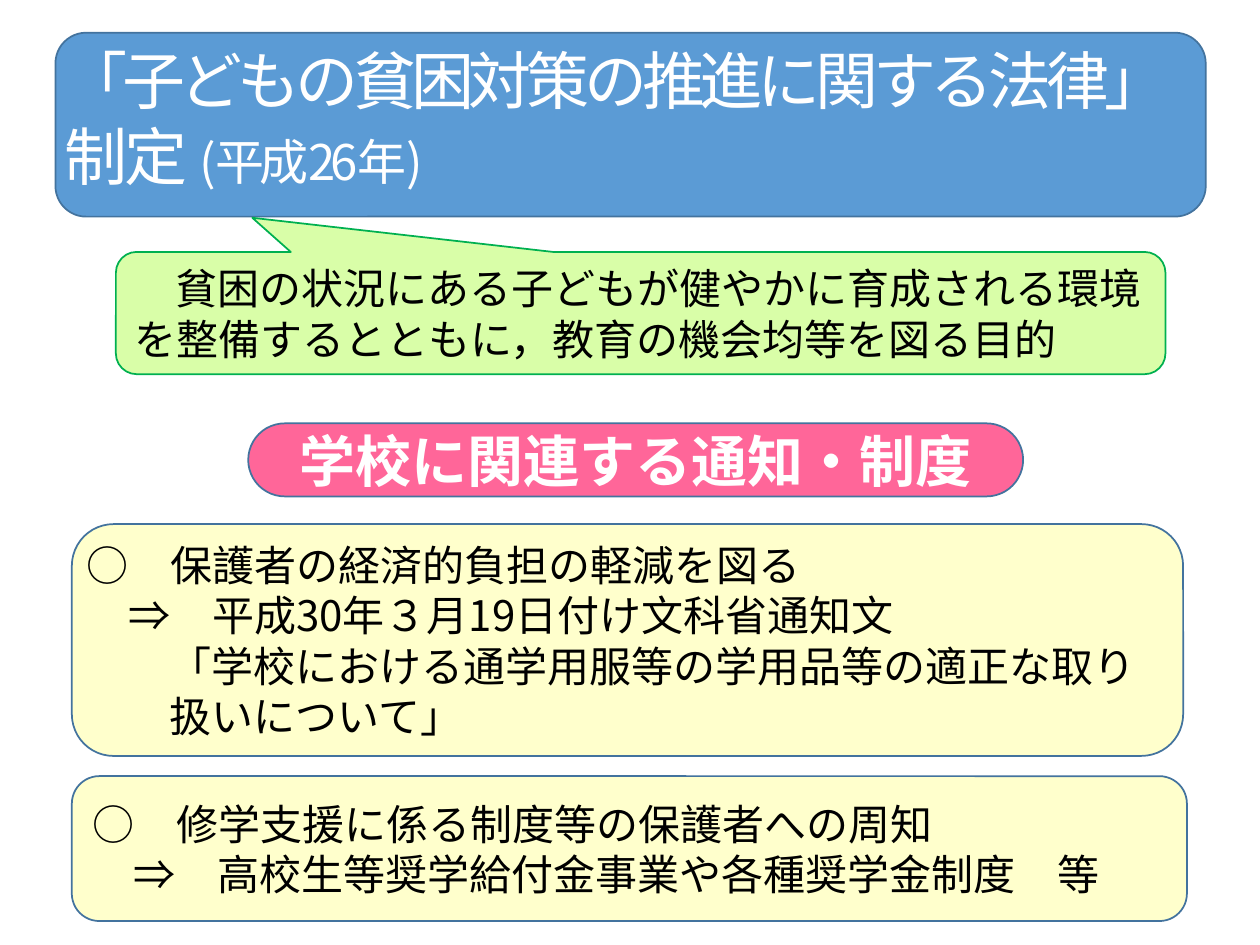
from dataclasses import dataclass

from lxml import etree
from pptx import Presentation
from pptx.dml.color import RGBColor
from pptx.enum.shapes import MSO_SHAPE
from pptx.enum.text import MSO_ANCHOR, PP_ALIGN
from pptx.oxml.ns import qn
from pptx.util import Inches, Pt

ROUNDED = MSO_SHAPE.ROUNDED_RECTANGLE
CALLOUT = MSO_SHAPE.ROUNDED_RECTANGULAR_CALLOUT
TOP, MIDDLE = MSO_ANCHOR.TOP, MSO_ANCHOR.MIDDLE
LEFT, CENTER = PP_ALIGN.LEFT, PP_ALIGN.CENTER


@dataclass(frozen=True)
class Theme:
    font: str = "Noto Sans CJK JP"
    blue: str = "5B9BD5"
    green: str = "D9FEA8"
    yellow: str = "FFFFCC"
    pink: str = "FF6699"
    outline: str = "43739E"
    green_outline: str = "00B050"
    white: str = "FFFFFF"
    black: str = "000000"
    title_size: int = 36
    heading_size: int = 32
    year_size: int = 28
    body_size: int = 24


THEME = Theme()
FULL_WIDTH = 0.33  # one full-width character at body size, in inches


def add_panel(slide, box, fill, preset=ROUNDED, adjustments=(),
              outline=THEME.outline, anchor=MIDDLE, insets=(0.1, 0.05)):
    """Add a filled, outlined panel and return its text frame."""
    panel = slide.shapes.add_shape(preset, *map(Inches, box))
    panel.shadow.inherit = False
    for index, value in enumerate(adjustments):
        panel.adjustments[index] = value
    panel.fill.solid()
    panel.fill.fore_color.rgb = RGBColor.from_string(fill)
    panel.line.color.rgb = RGBColor.from_string(outline)
    panel.line.width = Pt(1)

    frame = panel.text_frame
    frame.word_wrap = True
    frame.vertical_anchor = anchor
    frame.margin_left = frame.margin_right = Inches(insets[0])
    frame.margin_top = frame.margin_bottom = Inches(insets[1])
    return frame


def style_paragraph(paragraph, size, color, bold=False, align=LEFT):
    paragraph.alignment = align
    paragraph.font.size = Pt(size)
    paragraph.font.bold = bold
    paragraph.font.color.rgb = RGBColor.from_string(color)
    paragraph.font.name = THEME.font
    for run in paragraph.runs:
        east_asian = etree.SubElement(run.font._element, qn("a:ea"))
        east_asian.set("typeface", THEME.font)


def set_indent(paragraph, margin, first_line=0):
    properties = paragraph._p.get_or_add_pPr()
    properties.set("marL", str(Inches(margin)))
    properties.set("indent", str(Inches(first_line)))


def add_title(slide):
    frame = add_panel(slide, (0.44, 0.26, 9.13, 1.46), THEME.blue,
                      anchor=TOP, insets=(0, 0))
    title = frame.paragraphs[0]
    # Text, size and letter spacing in points
    parts = (
        ("「子どもの貧困対策の推進に関する法律」", THEME.title_size, -3),
        ("制定 ", THEME.title_size, -1.5),
        ("(平成26年)", THEME.year_size, -3),
    )
    for text, size, spacing in parts:
        run = title.add_run()
        run.text = text
        run.font.size = Pt(size)
        run.font._element.set("spc", str(int(spacing * 100)))
    style_paragraph(title, THEME.title_size, THEME.white)


def add_purpose(slide):
    frame = add_panel(slide, (0.92, 2, 8.33, 0.97), THEME.green, CALLOUT,
                      (-0.37, -0.78, 0.17), THEME.green_outline)
    purpose = frame.paragraphs[0]
    purpose.text = ("貧困の状況にある子どもが健やかに育成される環境を整備すると"
                    "ともに，教育の機会均等を図る目的")
    style_paragraph(purpose, THEME.body_size, THEME.black)
    set_indent(purpose, 0, FULL_WIDTH)


def add_heading(slide):
    frame = add_panel(slide, (1.97, 3.36, 6.15, 0.58), THEME.pink,
                      adjustments=(0.5,))
    heading = frame.paragraphs[0]
    heading.text = "学校に関連する通知・制度"
    style_paragraph(heading, THEME.heading_size, THEME.white, True, CENTER)


def add_notice(slide, box, rounding, lines, insets=(0.1, 0.05), offset=0):
    """Add a yellow panel; each line is (indent level, text)."""
    frame = add_panel(slide, box, THEME.yellow, adjustments=(rounding,),
                      insets=insets)
    for index, (level, text) in enumerate(lines):
        line = frame.add_paragraph() if index else frame.paragraphs[0]
        line.text = text
        style_paragraph(line, THEME.body_size, THEME.black)
        set_indent(line, offset + level * FULL_WIDTH)


def main():
    deck = Presentation()
    deck.slide_width, deck.slide_height = Inches(10), Inches(7.5)
    slide = deck.slides.add_slide(deck.slide_layouts[6])

    # The law and its purpose
    add_title(slide)
    add_purpose(slide)

    # Notices and systems related to schools
    add_heading(slide)
    add_notice(slide, (0.57, 4.16, 8.82, 1.84), 0.18, (
        (0, "○　保護者の経済的負担の軽減を図る"),
        (1, "⇒　平成30年３月19日付け文科省通知文"),
        (2, "「学校における通学用服等の学用品等の適正な取り"),
        (2, "扱いについて」"),
    ), insets=(0, 0.05), offset=0.02)
    add_notice(slide, (0.57, 6.16, 8.85, 1.15), 0.19, (
        (0, "○　修学支援に係る制度等の保護者への周知"),
        (1, "⇒　高校生等奨学給付金事業や各種奨学金制度　等"),
    ))

    deck.save("out.pptx")


if __name__ == "__main__":
    main()
